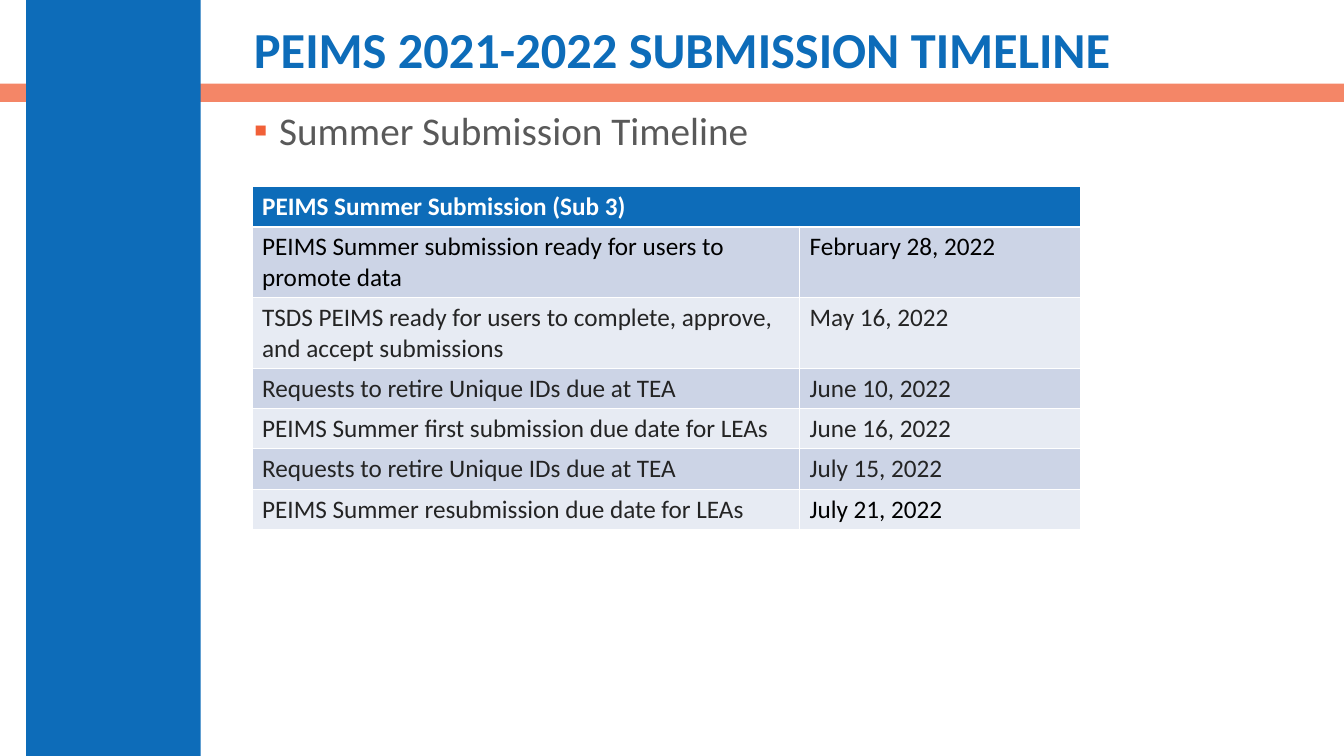
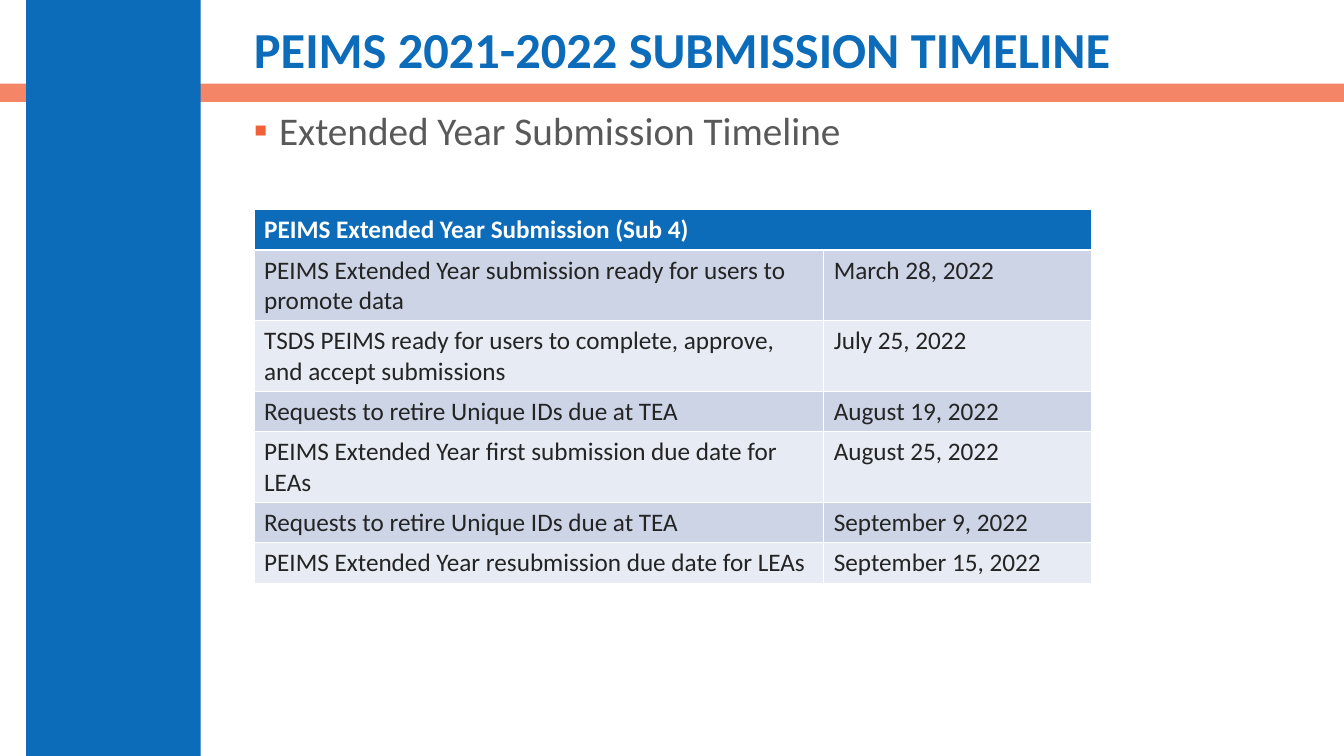
from pptx import Presentation
from pptx.dml.color import RGBColor
from pptx.enum.shapes import MSO_SHAPE as Shape
from pptx.enum.text import MSO_ANCHOR as Anchor
from pptx.oxml import parse_xml
from pptx.oxml.ns import nsdecls, qn
from pptx.util import Inches, Pt

COLORS = {
    "blue": "0D6CB9", "orange": "F16038", "white": "FFFFFF",
    "gray": "595959", "ink": "242424", "black": "000000",
    "dark": "CCD4E6", "light": "E7EBF3",
}
FONT = "Calibri"
TITLE = "PEIMS 2021-2022 SUBMISSION TIMELINE"
RETIRE = "Requests to retire Unique IDs due at TEA"
READY = "TSDS PEIMS ready for users to complete, approve, and accept submissions"

SLIDES = [
    {
        "term": "Summer", "sub": 3, "at": (2.5, 1.85),
        "cols": (5.43, 2.79), "rows": (0.35, 0.62, 0.62, 0.35, 0.35, 0.35, 0.35),
        "dates": ("February 28, 2022", "May 16, 2022", "June 10, 2022",
                  "June 16, 2022", "July 15, 2022", "July 21, 2022"),
        "black": {(1, 0), (1, 1), (6, 1)},
    },
    {
        "term": "Extended Year", "sub": 4, "at": (2.52, 2.08),
        "cols": (5.65, 2.65), "rows": (0.34, 0.36, 0.62, 0.36, 0.36, 0.36, 0.36),
        "dates": ("March 28, 2022", "July 25, 2022", "August 19, 2022",
                  "August 25, 2022", "September 9, 2022", "September 15, 2022"),
        "black": set(),
    },
]


def rgb(name):
    return RGBColor.from_string(COLORS[name])


def xml(tag, body="", attrs=""):
    return parse_xml(f"<a:{tag} {nsdecls('a')} {attrs}>{body}</a:{tag}>")


def write(frame, text, size=18, color="ink", bold=False, line=None, bullet=None):
    frame.word_wrap = True
    para = frame.paragraphs[0]
    if line:
        para.line_spacing = line
    if bullet:
        props = para._p.get_or_add_pPr()
        props.set("marL", str(Inches(0.25)))
        props.set("indent", str(-Inches(0.25)))
        props.append(xml("buClr", f'<a:srgbClr val="{COLORS["orange"]}"/>'))
        props.append(xml("buFont", attrs=f'typeface="{FONT}"'))
        props.append(xml("buChar", attrs=f'char="{bullet}"'))
    run = para.add_run()
    run.text = text
    font = run.font
    font.name, font.size, font.bold = FONT, Pt(size), bold
    font.color.rgb = rgb(color)


def band(slide, box, color, alpha=None):
    shape = slide.shapes.add_shape(Shape.RECTANGLE, *map(Inches, box))
    shape.shadow.inherit = False
    shape.fill.solid()
    shape.fill.fore_color.rgb = rgb(color)
    shape.line.fill.background()
    if alpha:
        tint = shape.element.spPr.find(qn("a:solidFill"))[0]
        tint.append(xml("alpha", attrs=f'val="{alpha * 1000}"'))


def label(slide, box, text, anchor=Anchor.TOP, **style):
    frame = slide.shapes.add_textbox(*map(Inches, box)).text_frame
    frame.vertical_anchor = anchor
    write(frame, text, **style)


def edge(cell, row):
    thick = {0: "lnB", 1: "lnT"}.get(row)
    props = cell._tc.get_or_add_tcPr()
    paint = f'<a:solidFill><a:srgbClr val="{COLORS["white"]}"/></a:solidFill>'
    for spot, side in enumerate(("lnL", "lnR", "lnT", "lnB")):
        width = Pt(1.97 if side == thick else 0.66)
        props.insert(spot, xml(side, paint, f'w="{width}"'))


def grid(slide, at, cols, rows, data, black):
    left, top = at
    box = (left, top, sum(cols), sum(rows))
    table = slide.shapes.add_table(len(rows), len(cols), *map(Inches, box)).table
    for col, width in zip(table.columns, cols):
        col.width = Inches(width)
    for row, height in zip(table.rows, rows):
        row.height = Inches(height)
    table.cell(0, 0).merge(table.cell(0, len(cols) - 1))
    for r, line in enumerate(data):
        fill = "blue" if r == 0 else "dark" if r % 2 else "light"
        for c in range(len(cols)):
            cell = table.cell(r, c)
            cell.fill.solid()
            cell.fill.fore_color.rgb = rgb(fill)
            edge(cell, r)
            if c < len(line):
                ink = "white" if r == 0 else "black" if (r, c) in black else "ink"
                write(cell.text_frame, line[c], color=ink, bold=r == 0)


def frame(slide, topic):
    band(slide, (0, 0.83, 13.33, 0.18), "orange", alpha=76)
    band(slide, (0.26, 0, 1.73, 7.5), "blue")
    label(slide, (2.42, 0.22, 10.41, 0.59), TITLE, anchor=Anchor.MIDDLE,
          size=36, color="blue", bold=True, line=0.9)
    label(slide, (2.42, 1.06, 9.98, 0.6), topic,
          size=28, color="gray", line=0.9, bullet="▪")


def timeline(slide, term, sub, at, cols, rows, dates, black):
    frame(slide, f"{term} Submission Timeline")
    tasks = (
        f"PEIMS {term} submission ready for users to promote data",
        READY,
        RETIRE,
        f"PEIMS {term} first submission due date for LEAs",
        RETIRE,
        f"PEIMS {term} resubmission due date for LEAs",
    )
    data = [(f"PEIMS {term} Submission (Sub {sub})",), *zip(tasks, dates)]
    grid(slide, at, cols, rows, data, black)


def main():
    deck = Presentation()
    deck.slide_width, deck.slide_height = Inches(13.33), Inches(7.5)
    for item in SLIDES:
        timeline(deck.slides.add_slide(deck.slide_layouts[6]), **item)
    deck.save("out.pptx")


if __name__ == "__main__":
    main()
